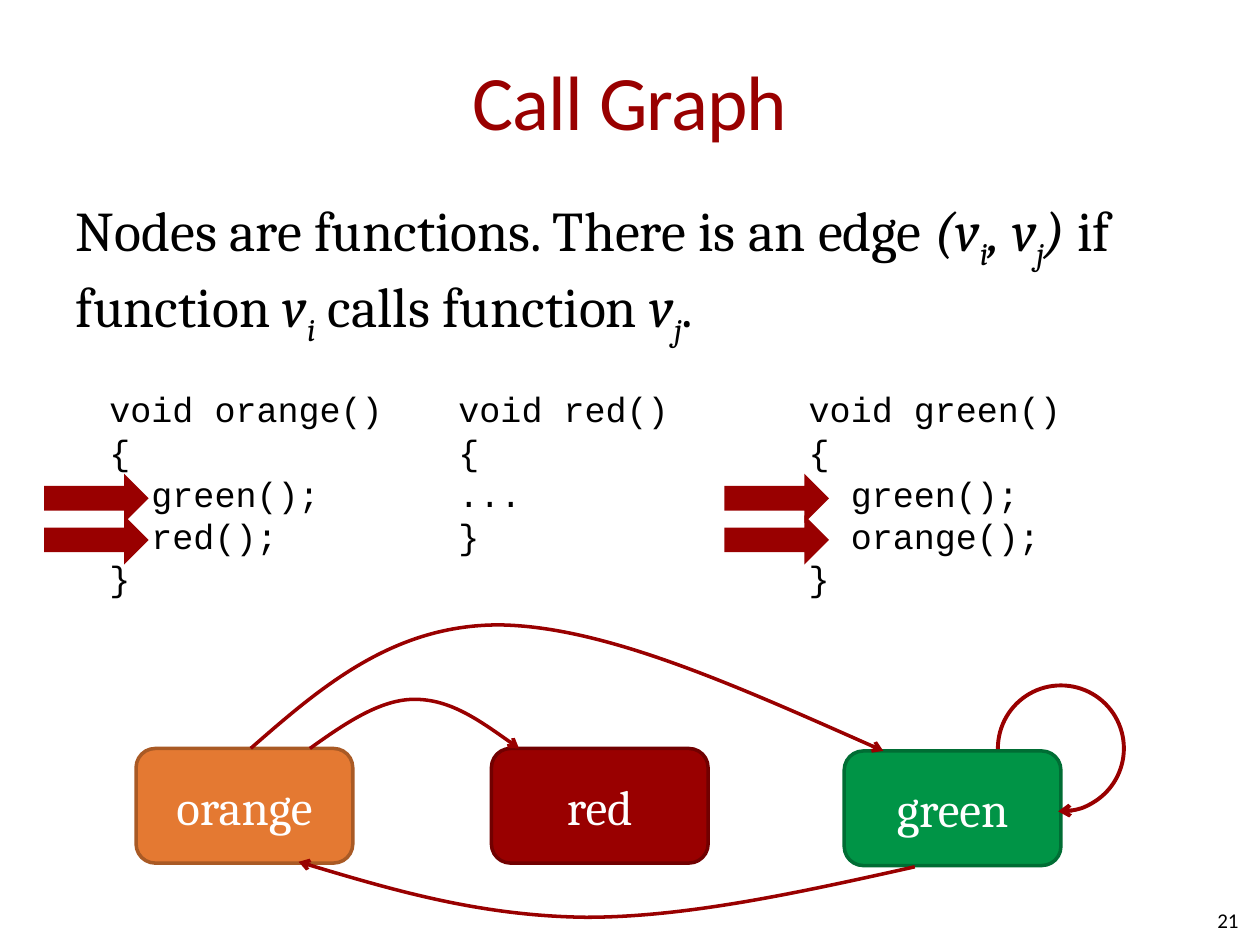
from lxml.etree import SubElement
from pptx import Presentation
from pptx.dml.color import RGBColor
from pptx.enum.shapes import MSO_SHAPE as Shape
from pptx.enum.text import MSO_ANCHOR as Anchor, PP_ALIGN as Align
from pptx.oxml.ns import qn
from pptx.util import Inches, Pt

# Content
TITLE = "Call Graph"
PAGE = "21"
# Runs of the definition: text and style (plain, italic or subscript)
DEFINITION = [
    ("Nodes are functions. There is an edge ", "plain"),
    ("(v", "italic"), ("i", "sub"), (", v", "italic"), ("j", "sub"), (")", "italic"),
    (" if function ", "plain"), ("v", "italic"), ("i", "sub"),
    (" calls function ", "plain"), ("v", "italic"), ("j", "sub"), (".", "plain"),
]
# Code: left, width, height, lines
LISTINGS = [
    (0.77, 3.52, 1.78, ["void orange()", "{", "  green();", "  red();", "}"]),
    (3.54, 1.91, 1.45, ["void red()", "{", "...", "}"]),
    (6.32, 3.52, 1.78, ["void green()", "{", "  green();", "  orange();", "}"]),
]
# Nodes: name, left, top
NODES = [("orange", 1.08, 5.94), ("red", 3.9, 5.94), ("green", 6.7, 5.96)]
# Calls between nodes: start point, then two Bezier segments of three points
CALLS = [
    [(2.46, 5.94), (2.74, 5.74), (3.02, 5.55), (3.29, 5.55),
     (3.57, 5.55), (3.84, 5.74), (4.12, 5.94)],   # orange to red
    [(7.26, 6.88), (6.36, 7.08), (5.46, 7.28), (4.65, 7.28),
     (3.83, 7.27), (3.1, 7.06), (2.37, 6.84)],    # green to orange
    [(1.99, 5.94), (2.55, 5.45), (3.12, 4.96), (3.96, 4.96),
     (4.8, 4.97), (5.9, 5.47), (7.01, 5.96)],     # orange to green
]
POINTER_COLUMNS, POINTER_ROWS = (0.35, 5.75), (3.76, 4.09)

COLORS = {
    "black": "000000", "white": "FFFFFF",
    "orange": "E47932", "red": "990000", "green": "009446",
    "orange edge": "A95A25", "red edge": "710000", "green edge": "006D34",
}


def color(name):
    return RGBColor.from_string(COLORS[name])


def box(*lengths):
    return [Inches(length) for length in lengths]


def style(run, face, size, tint="black"):
    run.font.name, run.font.size = face, Pt(size)
    run.font.color.rgb = color(tint)


def paint(shape, fill=None, line=None, width=2):
    shape.shadow.inherit = False
    if fill:
        shape.fill.solid()
        shape.fill.fore_color.rgb = color(fill)
    else:
        shape.fill.background()
    if line:
        shape.line.color.rgb = color(line)
        shape.line.width = Pt(width)
    else:
        shape.line.fill.background()


def add_arrowhead(shape):
    SubElement(shape.line._get_or_add_ln(), qn("a:tailEnd"), type="arrow")


def add_curve(shapes, points):
    # The builder rounds to whole units, so points are given in EMU
    start, *ends = [box(*point) for point in points]
    builder = shapes.build_freeform(*start)
    builder.add_line_segments(ends, close=False)
    curve = builder.convert_to_shape()
    # Gather each three line ends into one Bezier segment
    lines = list(curve._element.iter(qn("a:lnTo")))
    outline = lines[0].getparent()
    for first in range(0, len(lines), 3):
        bezier = SubElement(outline, qn("a:cubicBezTo"))
        for line in lines[first:first + 3]:
            bezier.append(line[0])
            outline.remove(line)
    paint(curve, line="red")
    add_arrowhead(curve)


def place(shape, *lengths):
    shape.left, shape.top, shape.width, shape.height = box(*lengths)


def main():
    prs = Presentation()
    prs.slide_width, prs.slide_height = box(10, 7.5)
    slide = prs.slides.add_slide(prs.slide_layouts[1])
    shapes = slide.shapes

    # Title
    title = shapes.title
    place(title, 0.5, 0.17, 9, 1.25)
    frame = title.text_frame
    frame.text = TITLE
    frame.margin_left = frame.margin_right = 0
    frame.vertical_anchor = Anchor.MIDDLE
    heading = frame.paragraphs[0].runs[0]
    style(heading, "Calibri", 44, "red")
    heading._r.get_or_add_rPr().set("spc", "-50")

    # Definition, without a bullet
    definition = slide.placeholders[1]
    place(definition, 0.5, 1.5, 9, 5.2)
    sentence = definition.text_frame.paragraphs[0]
    sentence.space_before = Pt(6.4)
    props = sentence._p.get_or_add_pPr()
    props.set("marL", "0")
    props.set("indent", "0")
    SubElement(props, qn("a:buNone"))
    for text, kind in DEFINITION:
        run = sentence.add_run()
        run.text = text
        style(run, "Cambria", 32)
        run.font.italic = kind != "plain"
        if kind == "sub":
            run._r.get_or_add_rPr().set("baseline", "-25000")

    # Code
    for left, width, height, lines in LISTINGS:
        frame = shapes.add_textbox(*box(left, 3.03, width, height)).text_frame
        frame.word_wrap = True
        frame.text = "\n".join(lines)
        for paragraph in frame.paragraphs:
            style(paragraph.runs[0], "Courier New", 20)

    # Page number
    frame = shapes.add_textbox(*box(7.5, 7.1, 2.33, 0.4)).text_frame
    frame.word_wrap = True
    frame.margin_left = frame.margin_right = frame.margin_top = frame.margin_bottom = 0
    frame.vertical_anchor = Anchor.MIDDLE
    frame.text = PAGE
    frame.paragraphs[0].alignment = Align.RIGHT
    style(frame.paragraphs[0].runs[0], "Calibri", 12)

    # Graph nodes
    for name, left, top in NODES:
        node = shapes.add_shape(Shape.ROUNDED_RECTANGLE, *box(left, top, 1.72, 0.91))
        paint(node, name, f"{name} edge")
        frame = node.text_frame
        frame.text = name
        frame.vertical_anchor = Anchor.MIDDLE
        frame.paragraphs[0].alignment = Align.CENTER
        style(frame.paragraphs[0].runs[0], "Cambria", 28, "white")

    # Calls, and the call of green to itself
    for points in CALLS:
        add_curve(shapes, points)
    self_call = shapes.add_shape(Shape.ARC, *box(7.92, 5.44, 1, 1))
    self_call.adjustments[0], self_call.adjustments[1] = 107.56, 55.52
    paint(self_call, line="red", width=2.25)
    add_arrowhead(self_call)

    # Pointers to the calls in the code
    for left in POINTER_COLUMNS:
        for top in POINTER_ROWS:
            paint(shapes.add_shape(Shape.RIGHT_ARROW, *box(left, top, 0.83, 0.39)), "red")

    prs.save("out.pptx")


if __name__ == "__main__":
    main()
